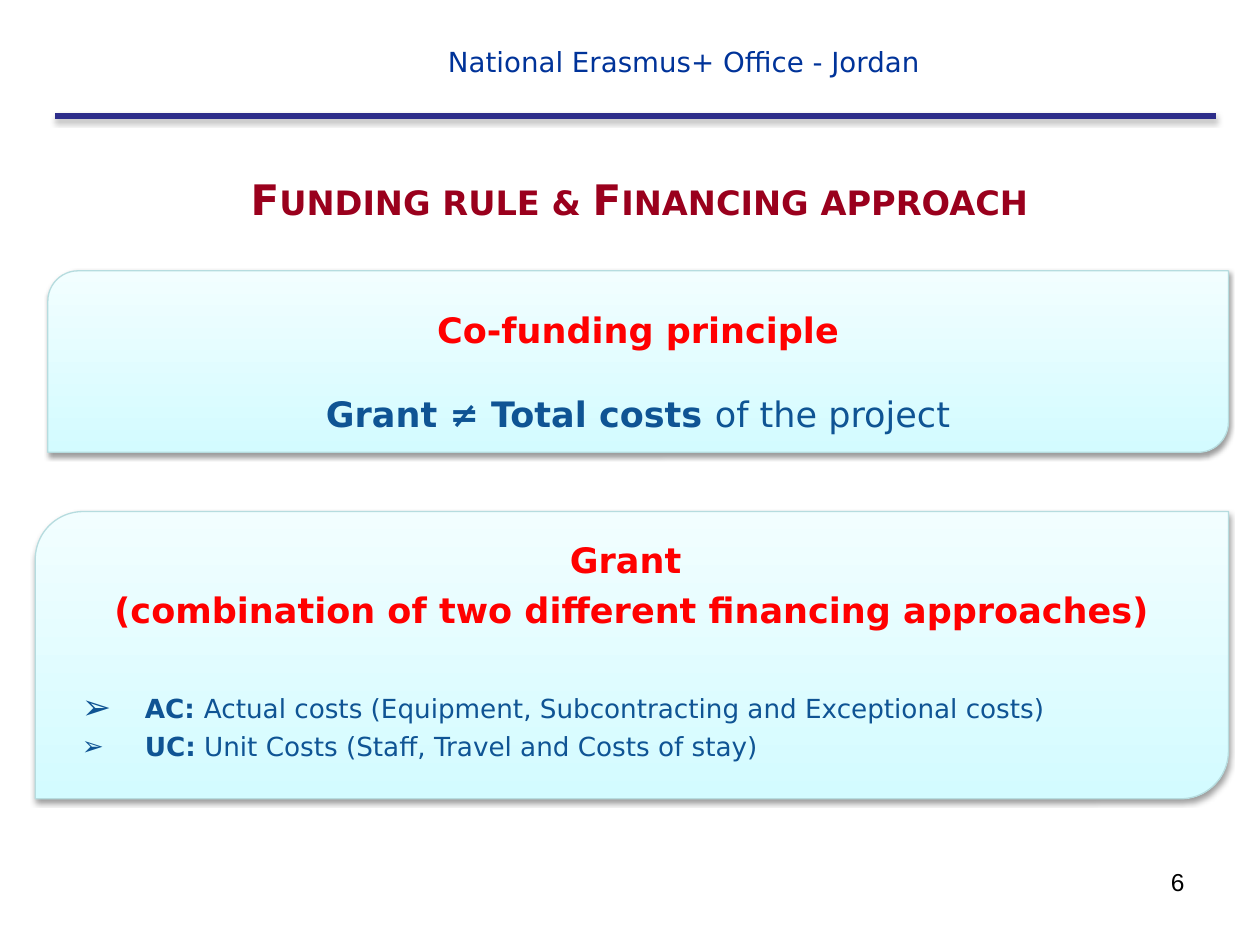
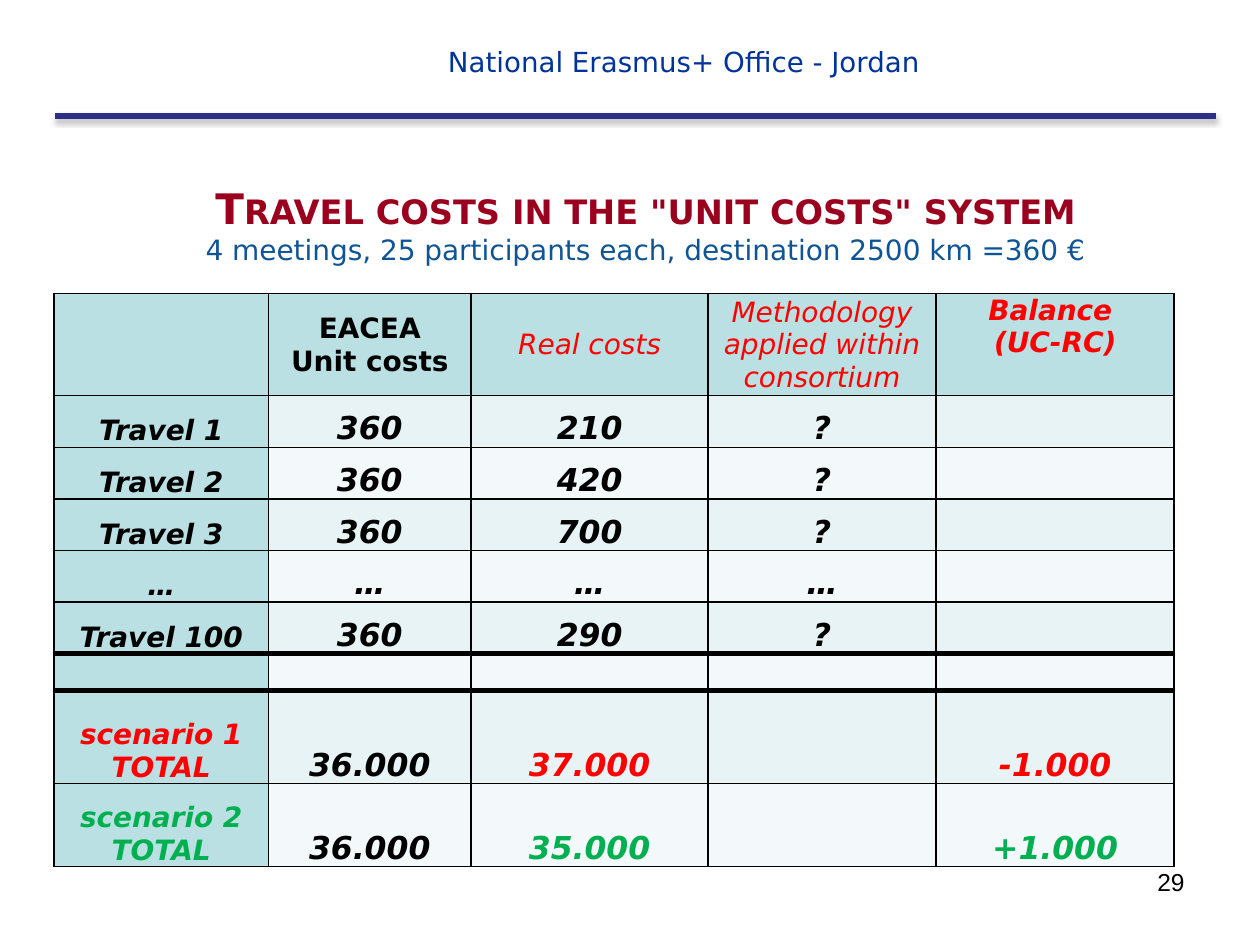
from lxml.etree import SubElement
from pptx import Presentation
from pptx.dml.color import RGBColor
from pptx.enum.shapes import MSO_CONNECTOR, MSO_SHAPE
from pptx.enum.text import MSO_ANCHOR as ANCHOR, MSO_AUTO_SIZE, PP_ALIGN as ALIGN
from pptx.oxml.ns import qn
from pptx.util import Inches, Pt

FONT = "DejaVu Sans"
BLACK, RED, GREEN = "000000", "FF0000", "00B050"
MAROON, BLUE, HEADER_BLUE, RULE = "9A001D", "0F5494", "003399", "2D2D8A"
PANEL_TOP, PANEL_BOTTOM, PANEL_LINE = "F2FEFF", "D3FBFF", "B6DCDF"
HEAD_FILL, ODD_FILL, EVEN_FILL = "BBE0E3", "E7F3F4", "F3F9FA"


def rgb(value):
    return RGBColor.from_string(value)


class Deck:
    def __init__(self):
        self.prs = Presentation()
        self.prs.slide_width, self.prs.slide_height = Inches(10), Inches(7.5)
        self.slide = None

    def add_slide(self, number):
        self.slide = self.prs.slides.add_slide(self.prs.slide_layouts[5])
        self.text_box((2.99, 0.21, 4.88, 0.46), "National Erasmus+ Office - Jordan",
                      15.8, HEADER_BLUE, ALIGN.CENTER, ANCHOR.BOTTOM)
        self.rule(0.44, 9.65, 0.92)
        self.text_box((7.17, 6.83, 2.33, 0.52), number, 14, BLACK,
                      ALIGN.RIGHT, ANCHOR.TOP, "Arial")

    def run(self, p, text, size, color, bold=False, italic=False, font=FONT):
        r = p.add_run()
        r.text = text
        f = r.font
        f.name, f.size, f.bold, f.italic = font, Pt(size), bold, italic
        f.color.rgb = rgb(color)
        return r

    def paragraph(self, tf, align, before=0):
        p = tf.paragraphs[0]
        if p.runs:
            p = tf.add_paragraph()
            p.space_before = Pt(before)
        p.alignment = align
        return p

    def text_box(self, box, text, size, color, align, anchor, font=FONT):
        tf = self.slide.shapes.add_textbox(*map(Inches, box)).text_frame
        tf.word_wrap = True
        tf.vertical_anchor = anchor
        self.run(self.paragraph(tf, align), text, size, color, font=font)

    def shadow(self, sp, opacity, blur, distance):
        effects = SubElement(sp._element.spPr, qn("a:effectLst"))
        outer = SubElement(effects, qn("a:outerShdw"), blurRad=str(Pt(blur)),
                           dist=str(Pt(distance)), dir="5400000", rotWithShape="0")
        color = SubElement(outer, qn("a:srgbClr"), val=BLACK)
        SubElement(color, qn("a:alpha"), val=str(opacity * 1000))

    def rule(self, left, right, y):
        line = self.slide.shapes.add_connector(
            MSO_CONNECTOR.STRAIGHT, *map(Inches, (left, y, right, y)))
        line.line.color.rgb = rgb(RULE)
        line.line.width = Pt(3)
        self.shadow(line, 35, 3.1, 1.8)

    def title(self, box, text, subtitle=None):
        sp = self.slide.shapes.title
        sp.left, sp.top, sp.width, sp.height = map(Inches, box)
        tf = sp.text_frame
        tf.auto_size = MSO_AUTO_SIZE.NONE
        tf.vertical_anchor = ANCHOR.MIDDLE
        tf.margin_left = Inches(0.49)
        r = self.run(self.paragraph(tf, ALIGN.CENTER), text, 24, MAROON, True)
        r.font._element.set("cap", "small")
        if subtitle:
            self.run(self.paragraph(tf, ALIGN.CENTER), subtitle, 16, BLUE)

    def panel(self, box, top_inset):
        sp = self.slide.shapes.add_shape(MSO_SHAPE.ROUND_2_DIAG_RECTANGLE, *map(Inches, box))
        sp.fill.gradient()
        sp.fill.gradient_angle = 270
        for stop, color in zip(sp.fill.gradient_stops, (PANEL_TOP, PANEL_BOTTOM)):
            stop.color.rgb = rgb(color)
        sp.line.color.rgb = rgb(PANEL_LINE)
        sp.line.width = Pt(0.75)
        self.shadow(sp, 38, 3.1, 1.6)
        tf = sp.text_frame
        tf.word_wrap = True
        tf.vertical_anchor = ANCHOR.TOP
        tf.margin_top = Inches(top_inset)
        return tf

    def heading(self, tf, text, before=0):
        self.run(self.paragraph(tf, ALIGN.CENTER, before), text, 20, RED, True)

    def bullet(self, tf, label, text, before, percent):
        p = self.paragraph(tf, ALIGN.LEFT, before)
        pPr = p._p.get_or_add_pPr()
        pPr.set("marL", str(Inches(0.66)))
        pPr.set("indent", str(Inches(-0.5)))
        SubElement(SubElement(pPr, qn("a:buClr")), qn("a:srgbClr"), val=BLUE)
        SubElement(pPr, qn("a:buSzPct"), val=str(percent * 1000))
        SubElement(pPr, qn("a:buFont"), typeface=FONT)
        SubElement(pPr, qn("a:buChar"), char="➢")
        self.run(p, label, 15, BLUE, True)
        self.run(p, text, 15, BLUE)

    def table(self, left, top, widths, heights):
        frame = self.slide.shapes.add_table(
            len(heights), len(widths), Inches(left), Inches(top),
            Inches(sum(widths)), Inches(sum(heights)))
        table = frame.table
        table.first_row = table.horz_banding = False
        for col, width in zip(table.columns, widths):
            col.width = Inches(width)
        for row, height in zip(table.rows, heights):
            row.height = Inches(height)
        return table

    def cell(self, cell, lines, size, color, fill, anchor, bold, italic, top, bottom):
        cell.margin_left = cell.margin_right = cell.margin_top = Inches(0.01)
        cell.margin_bottom = 0
        cell.vertical_anchor = anchor
        for side, width in (("L", 1), ("R", 1), ("T", top), ("B", bottom)):
            ln = SubElement(cell._tc.get_or_add_tcPr(), qn(f"a:ln{side}"), w=str(Pt(width)))
            SubElement(SubElement(ln, qn("a:solidFill")), qn("a:srgbClr"), val=BLACK)
        cell.fill.solid()
        cell.fill.fore_color.rgb = rgb(fill)
        tf = cell.text_frame
        if not lines:
            SubElement(tf.paragraphs[0]._p, qn("a:endParaRPr"), sz="1600")
            return
        for line in lines.split("\n"):
            self.run(self.paragraph(tf, ALIGN.CENTER), line, size, color, bold, italic)


def funding_slide(deck):
    deck.add_slide("6")
    deck.title((0.38, 1.07, 9, 1.02), "Funding rule & Financing approach")

    tf = deck.panel((0.38, 2.15, 9.37, 1.44), 0.23)
    deck.heading(tf, "Co-funding principle")
    p = deck.paragraph(tf, ALIGN.CENTER, 24)
    deck.run(p, "Grant ≠ Total costs ", 20, BLUE, True)
    deck.run(p, "of the project", 20, BLUE)

    tf = deck.panel((0.28, 4.06, 9.47, 2.28), 0.1)
    deck.heading(tf, "Grant ")
    deck.heading(tf, "(combination of two different financing approaches)", 5)
    deck.bullet(tf, "AC: ", "Actual costs (Equipment, Subcontracting and Exceptional costs)", 35, 133)
    deck.bullet(tf, "UC:", " Unit Costs (Staff, Travel and Costs of stay)", 4, 100)


def travel_slide(deck):
    deck.add_slide("29")
    deck.title((0.43, 1.23, 9, 1.1), 'Travel costs in the "unit costs" system',
               "4 meetings, 25 participants each, destination 2500 km =360 €")
    headers = [
        ("", BLACK, True, False, ANCHOR.MIDDLE),
        ("EACEA\nUnit costs", BLACK, True, False, ANCHOR.MIDDLE),
        ("Real costs", RED, False, True, ANCHOR.MIDDLE),
        ("Methodology applied within consortium", RED, False, True, ANCHOR.MIDDLE),
        ("Balance \n(UC-RC)", RED, True, True, ANCHOR.TOP),
    ]
    rows = [
        ("Travel 1", "360", "210", "?", ""),
        ("Travel 2", "360", "420", "?", ""),
        ("Travel 3", "360", "700", "?", ""),
        ("…", "…", "…", "…", ""),
        ("Travel 100", "360", "290", "?", ""),
        ("", "", "", "", ""),
        ("scenario 1 TOTAL", "36.000", "37.000", "", "-1.000"),
        ("scenario 2 TOTAL", "36.000", "35.000", "", "+1.000"),
    ]
    row_colors = {7: RED, 8: GREEN}
    thick_edges = (6, 7)

    def edge(i):
        return 3 if i in thick_edges else 1

    table = deck.table(0.43, 2.33, [1.7, 1.61, 1.88, 1.81, 1.89],
                       [0.79] + [0.41] * 5 + [0.29, 0.74, 0.66])
    for j, (text, color, bold, italic, anchor) in enumerate(headers):
        deck.cell(table.cell(0, j), text, 16, color, HEAD_FILL, anchor, bold, italic, 1, 1)
    for i, row in enumerate(rows, 1):
        for j, text in enumerate(row):
            color = BLACK if j == 1 else row_colors.get(i, BLACK)
            band = ODD_FILL if i % 2 else EVEN_FILL
            deck.cell(table.cell(i, j), text, 18 if j else 16, color,
                      band if j else HEAD_FILL, ANCHOR.BOTTOM, True, True,
                      edge(i), edge(i + 1))


def main():
    deck = Deck()
    funding_slide(deck)
    travel_slide(deck)
    deck.prs.save("out.pptx")


if __name__ == "__main__":
    main()
